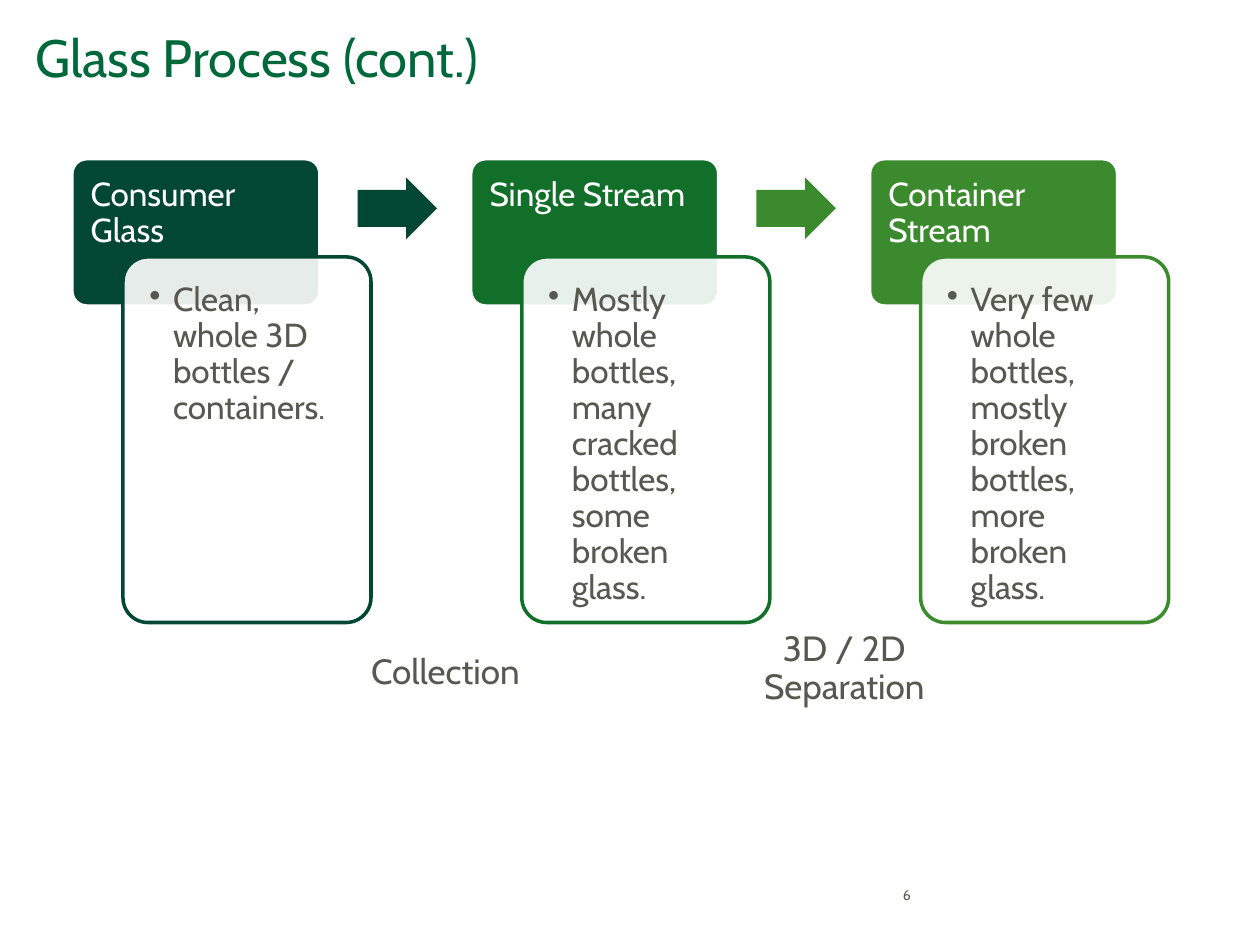
import lxml.etree
import pptx
import pptx.dml.color
import pptx.enum.shapes
import pptx.enum.text
import pptx.oxml.ns
import pptx.util

Cm = pptx.util.Cm
Pt = pptx.util.Pt
RGBColor = pptx.dml.color.RGBColor
MSO_SHAPE = pptx.enum.shapes.MSO_SHAPE
PP_ALIGN = pptx.enum.text.PP_ALIGN
MSO_ANCHOR = pptx.enum.text.MSO_ANCHOR
qn = pptx.oxml.ns.qn

FONT = "Cabin"
WHITE = RGBColor(0xFF, 0xFF, 0xFF)
GREY = RGBColor(0x57, 0x58, 0x4F)
TITLE_GREEN = RGBColor(0x00, 0x69, 0x3C)
DARK_GREEN = RGBColor(0x02, 0x47, 0x31)
MID_GREEN = RGBColor(0x12, 0x6F, 0x2A)
LIGHT_GREEN = RGBColor(0x3C, 0x8A, 0x2E)

FIRST_LEFT = 1.45
STAGE_PITCH = 8.04
STAGES = [
    ("Consumer Glass", "Clean, whole 3D bottles / containers.", DARK_GREEN),
    ("Single Stream",
     "Mostly whole bottles, many cracked bottles, some broken glass.", MID_GREEN),
    ("Container Stream",
     "Very few whole bottles, mostly broken bottles, more broken glass.", LIGHT_GREEN),
]
ARROW_COLORS = [DARK_GREEN, LIGHT_GREEN]
STEPS = [("Collection", 13.18), ("3D / 2D Separation", 12.73)]


def add_text(slide, box, text, size, color, align=PP_ALIGN.LEFT,
             anchor=MSO_ANCHOR.TOP, insets=(0, 0, 0, 0)):
    """Add a wrapped text box and return its paragraph; box and insets are in cm."""
    frame = slide.shapes.add_textbox(*map(Cm, box)).text_frame
    frame.word_wrap = True
    frame.vertical_anchor = anchor
    (frame.margin_left, frame.margin_top,
     frame.margin_right, frame.margin_bottom) = map(Cm, insets)
    frame.text = text
    paragraph = frame.paragraphs[0]
    paragraph.alignment = align
    paragraph.line_spacing = 0.9
    font = paragraph.runs[0].font
    font.name = FONT
    font.size = Pt(size)
    font.color.rgb = color
    return paragraph


def add_panel(slide, kind, box, adjustments, fill, line=None):
    """Add a filled preset shape, outlined only when a line colour is given."""
    panel = slide.shapes.add_shape(kind, *map(Cm, box))
    panel.shadow.inherit = False
    for index, value in enumerate(adjustments):
        panel.adjustments[index] = value
    panel.fill.solid()
    panel.fill.fore_color.rgb = fill
    if line is None:
        panel.line.fill.background()
    else:
        panel.line.color.rgb = line
        panel.line.width = Pt(2)
    return panel


def set_opacity(panel, percent):
    """Set the opacity of a solid fill."""
    color = panel.fill._xPr.find(qn("a:solidFill"))[0]
    lxml.etree.SubElement(color, qn("a:alpha")).set("val", str(percent * 1000))


def add_bullet(paragraph):
    """Give a paragraph a hanging round bullet."""
    properties = paragraph._p.get_or_add_pPr()
    properties.set("marL", str(Cm(0.48)))
    properties.set("indent", str(-Cm(0.48)))
    lxml.etree.SubElement(properties, qn("a:buChar")).set("char", "•")


def add_stage(slide, left, heading, description, color):
    """Add a heading block with its description card overlapping it."""
    add_panel(slide, MSO_SHAPE.ROUNDED_RECTANGLE, (left, 3.2, 5, 2.97), [0.1],
              color, WHITE)
    add_text(slide, (left, 3.2, 5, 1.98), heading, 19, WHITE,
             insets=(0.38, 0.38, 0.38, 0.2))
    card = add_panel(slide, MSO_SHAPE.ROUNDED_RECTANGLE,
                     (left + 1.03, 5.18, 5, 7.37), [0.1], WHITE, color)
    set_opacity(card, 90)
    add_bullet(add_text(slide, (left + 1.18, 5.33, 4.7, 7.06), description, 19, GREY,
                        insets=(0.38, 0.38, 0.38, 0.38)))


def main():
    """Build the glass process slide."""
    deck = pptx.Presentation()
    deck.slide_width, deck.slide_height = Cm(25.4), Cm(19.05)
    slide = deck.slides.add_slide(deck.slide_layouts[6])

    add_text(slide, (0.71, 0.64, 22.86, 2.69), "Glass Process (cont.)", 30, TITLE_GREEN)
    add_text(slide, (16.79, 17.81, 1.57, 0.41), "6", 8, GREY,
             PP_ALIGN.RIGHT, MSO_ANCHOR.BOTTOM)

    for index, stage in enumerate(STAGES):
        add_stage(slide, FIRST_LEFT + index * STAGE_PITCH, *stage)

    for index, (color, (step, top)) in enumerate(zip(ARROW_COLORS, STEPS)):
        offset = index * STAGE_PITCH
        add_panel(slide, MSO_SHAPE.RIGHT_ARROW, (7.21 + offset, 3.58, 1.6, 1.24),
                  [0.6, 0.5], color)
        add_text(slide, (7.19 + offset, top, 3.58, 1.57), step, 20, GREY,
                 PP_ALIGN.CENTER)

    deck.save("out.pptx")


if __name__ == "__main__":
    main()
